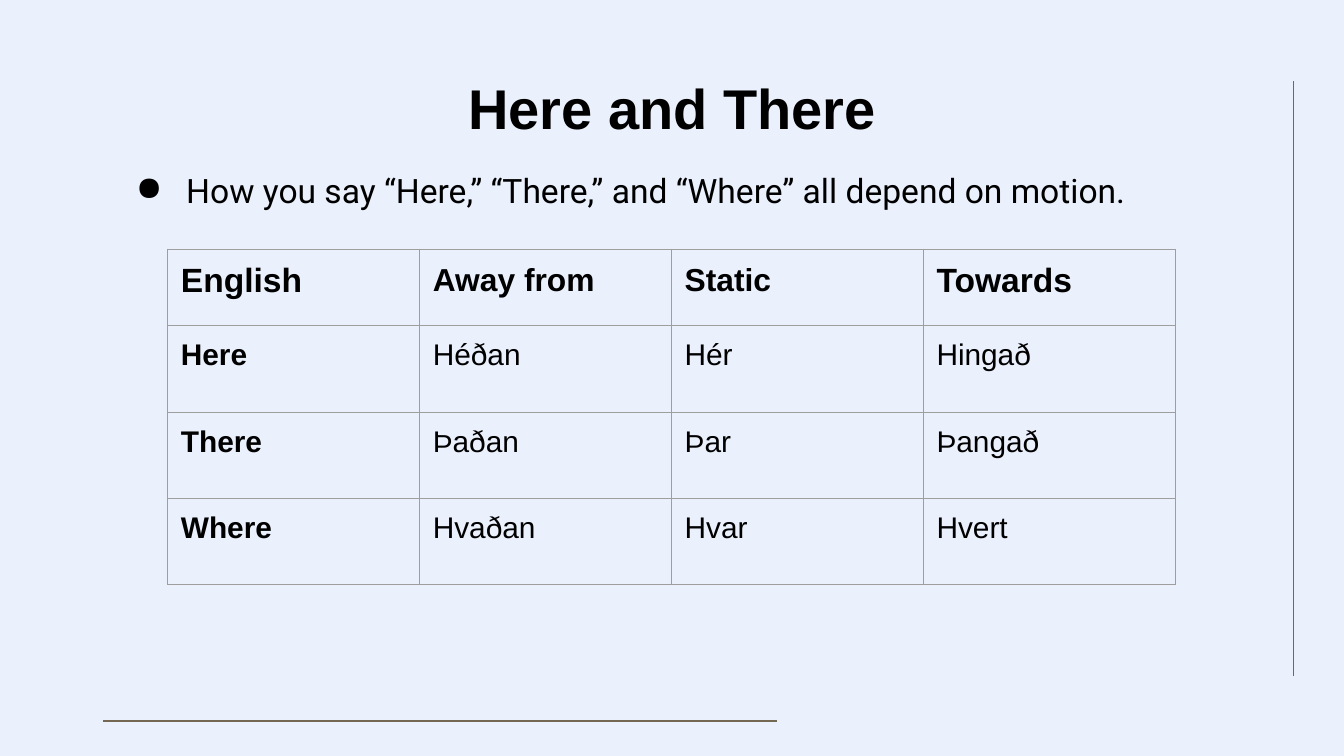
"""Build the "Here and There" slide with its table of motion adverbs."""
from lxml import etree
from pptx import Presentation
from pptx.dml.color import RGBColor
from pptx.enum.shapes import MSO_CONNECTOR
from pptx.enum.text import MSO_ANCHOR, MSO_AUTO_SIZE, PP_ALIGN
from pptx.oxml import parse_xml
from pptx.oxml.ns import nsdecls, qn
from pptx.util import Cm, Pt

STRAIGHT = MSO_CONNECTOR.STRAIGHT
TOP = MSO_ANCHOR.TOP
NO_FIT = MSO_AUTO_SIZE.NONE
CENTER = PP_ALIGN.CENTER

THEME = {
    "back": RGBColor(0xEA, 0xF0, 0xFC),
    "text": RGBColor(0, 0, 0),
    "rule": RGBColor(0x74, 0x68, 0x52),
    "border": "9E9E9E",
    "head_font": "Arial",
    "body_font": "Roboto",
    "title": 30,
    "body": 18,
    "header": [18, 17, 17, 18],
    "cell": 16,
    "line": Pt(0.75),
}
INSET = Cm(0.25)
ROWS = [
    ["English", "Away from", "Static", "Towards"],
    ["Here", "Héðan", "Hér", "Hingað"],
    ["There", "Þaðan", "Þar", "Þangað"],
    ["Where", "Hvaðan", "Hvar", "Hvert"],
]


def add_run(p, text, size, font, bold=False):
    r = p.add_run()
    r.text = text
    r.font.size = Pt(size)
    r.font.name = font
    r.font.bold = bold
    r.font.color.rgb = THEME["text"]


def set_frame(tf, top):
    tf.word_wrap = True
    tf.auto_size = NO_FIT
    tf.vertical_anchor = TOP
    tf.margin_left = tf.margin_right = tf.margin_bottom = INSET
    tf.margin_top = top


prs = Presentation()
prs.slide_width, prs.slide_height = Cm(25.4), Cm(14.29)
s = prs.slides.add_slide(prs.slide_layouts[5])
s.background.fill.solid()
s.background.fill.fore_color.rgb = THEME["back"]

for x1, y1, x2, y2 in [(24.45, 1.53, 24.45, 12.78), (14.68, 13.63, 1.95, 13.63)]:
    rule = s.shapes.add_connector(STRAIGHT, Cm(x1), Cm(y1), Cm(x2), Cm(y2))
    rule.line.color.rgb = THEME["rule"]
    rule.line.width = THEME["line"]
    etree.SubElement(rule._element.spPr, qn("a:effectLst"))

title = s.shapes.title
title.left, title.top, title.width, title.height = Cm(2), Cm(1.02), Cm(21.4), Cm(1.52)
set_frame(title.text_frame, Cm(0.37))
p = title.text_frame.paragraphs[0]
p.alignment = CENTER
add_run(p, "Here and There", THEME["title"], THEME["head_font"], True)

sp = s.shapes.add_textbox(Cm(2), Cm(2.92), Cm(21.4), Cm(1.02))
set_frame(sp.text_frame, Cm(0.3))
p = sp.text_frame.paragraphs[0]
add_run(p, "How you say “Here,” “There,” and “Where” all depend on motion.",
        THEME["body"], THEME["body_font"])
pPr = p._p.get_or_add_pPr()
pPr.set("marL", str(Cm(1.27)))
pPr.set("indent", str(-Cm(0.95)))
etree.SubElement(pPr, qn("a:buChar")).set("char", "●")

table = s.shapes.add_table(4, 4, Cm(3.17), Cm(4.71), Cm(19.04), Cm(6.34)).table
table.first_row = table.horz_banding = False
for col in table.columns:
    col.width = Cm(4.76)
for i, words in enumerate(ROWS):
    table.rows[i].height = Cm(1.63 if i else 1.45)
    for j, word in enumerate(words):
        cell = table.cell(i, j)
        cell.margin_left = cell.margin_right = INSET
        cell.margin_top = cell.margin_bottom = INSET
        tcPr = cell._tc.get_or_add_tcPr()
        for side in "LRTB":
            tcPr.append(parse_xml(
                f'<a:ln{side} {nsdecls("a")} w="{THEME["line"]}"><a:solidFill>'
                f'<a:srgbClr val="{THEME["border"]}"/></a:solidFill></a:ln{side}>'))
        cell.fill.background()
        size = THEME["cell"] if i else THEME["header"][j]
        add_run(cell.text_frame.paragraphs[0], word, size, THEME["head_font"],
                i == 0 or j == 0)

prs.save("out.pptx")
